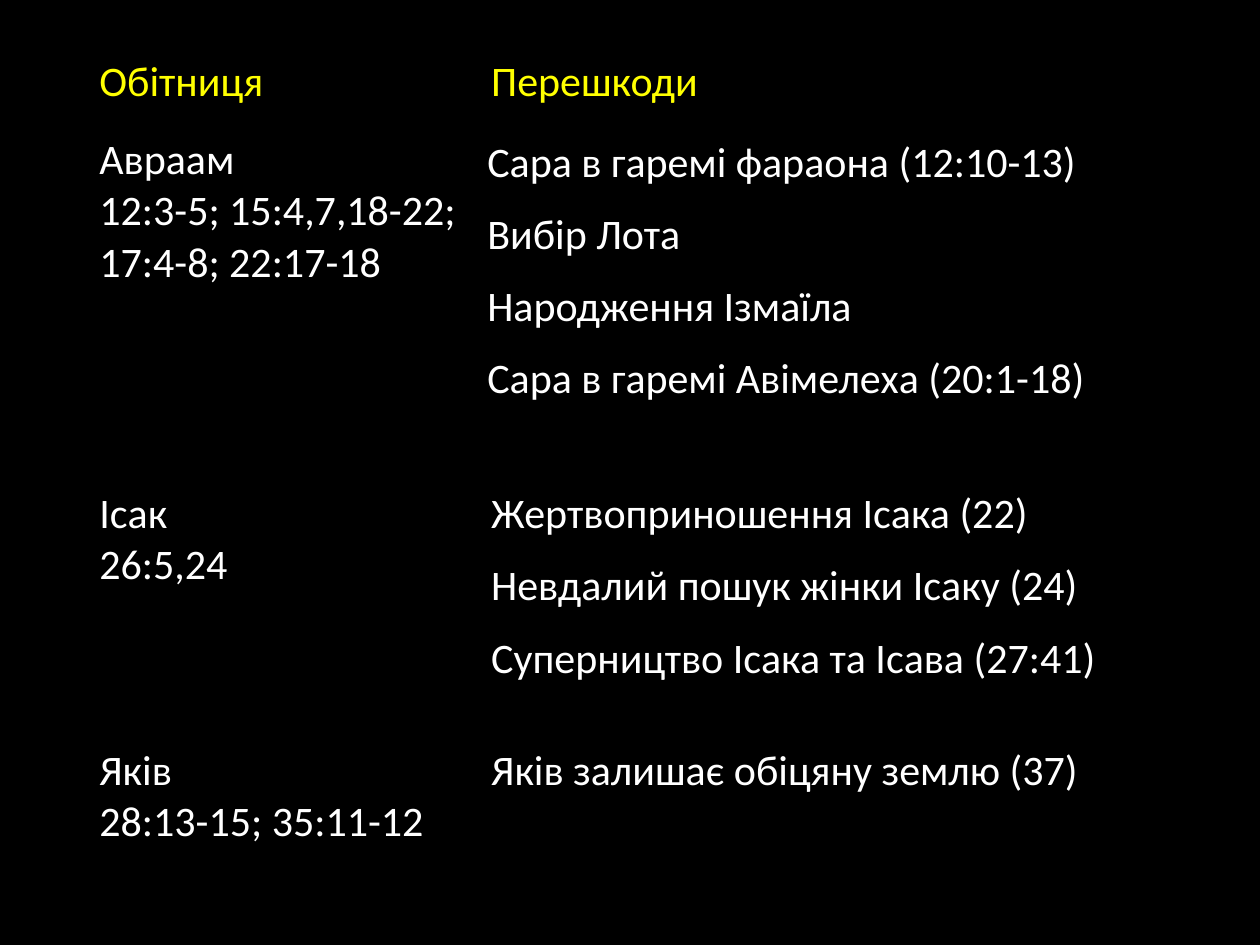
from pptx import Presentation
from pptx.dml.color import RGBColor as RGB
from pptx.oxml import parse_xml
from pptx.oxml.ns import nsdecls
from pptx.util import Pt

COLORS = {"background": "000000", "border": "000000",
          "heading": "FFFF00", "body": "FFFFFF"}

COLUMN_WIDTHS = [223.9, 397.1]
ROW_HEIGHTS = [44.6, 202.3, 146.9, 67.7]

HEADINGS = ["Обітниця", "Перешкоди"]
# Each row: promise paragraphs, obstacle paragraphs
PATRIARCHS = [
    (["Авраам", "12:3-5; 15:4,7,18-22; 17:4-8; 22:17-18"],
     ["Сара в гаремі фараона (12:10-13)", "Вибір Лота",
      "Народження Ізмаїла", "Сара в гаремі Авімелеха (20:1-18)"]),
    (["Ісак", "26:5,24"],
     ["Жертвоприношення Ісака (22)", "Невдалий пошук жінки Ісаку (24)",
      "Суперництво Ісака та Ісава (27:41)"]),
    (["Яків", "28:13-15; 35:11-12"],
     ["Яків залишає обіцяну землю (37)"]),
]


class Deck:
    font = "Calibri"
    size = Pt(24)
    border_width = Pt(1)

    def __init__(self, width, height):
        self.prs = Presentation()
        self.prs.slide_width, self.prs.slide_height = Pt(width), Pt(height)
        self.slide = None

    def add_slide(self):
        self.slide = self.prs.slides.add_slide(self.prs.slide_layouts[6])
        fill = self.slide.background.fill
        fill.solid()
        fill.fore_color.rgb = RGB.from_string(COLORS["background"])

    def table(self, left, top, widths, heights):
        grid = self.slide.shapes.add_table(
            len(heights), len(widths), Pt(left), Pt(top),
            Pt(sum(widths)), Pt(sum(heights))).table
        grid.first_row = grid.horz_banding = False
        for column, width in zip(grid.columns, widths):
            column.width = Pt(width)
        for row, height in zip(grid.rows, heights):
            row.height = Pt(height)
        return grid

    def borders(self, cell):
        properties = cell._tc.get_or_add_tcPr()
        for side in "LRTB":
            properties.append(parse_xml(
                f'<a:ln{side} {nsdecls("a")} w="{self.border_width}"><a:solidFill>'
                f'<a:srgbClr val="{COLORS["border"]}"/></a:solidFill></a:ln{side}>'))

    def cell(self, cell, lines, color, gap=0, inset=None):
        self.borders(cell)
        cell.fill.background()
        if inset is not None:
            cell.margin_left = cell.margin_right = Pt(inset)
            cell.margin_top = cell.margin_bottom = Pt(inset)
        frame = cell.text_frame
        for i, line in enumerate(lines):
            paragraph = frame.add_paragraph() if i else frame.paragraphs[0]
            if i and gap:
                paragraph.space_before = Pt(gap)
            run = paragraph.add_run()
            run.text = line
            run.font.name, run.font.size = self.font, self.size
            run.font.color.rgb = RGB.from_string(COLORS[color])


def main():
    deck = Deck(720, 540)
    deck.add_slide()
    promises = deck.table(49.6, 28.8, COLUMN_WIDTHS, ROW_HEIGHTS)

    # Heading row
    for col, heading in enumerate(HEADINGS):
        deck.cell(promises.cell(0, col), [heading], "heading")

    # One row for each patriarch; the first obstacles cell has even insets
    for row, (promise, obstacles) in enumerate(PATRIARCHS, start=1):
        deck.cell(promises.cell(row, 0), promise, "body")
        deck.cell(promises.cell(row, 1), obstacles, "body", gap=12,
                  inset=5 if row == 1 else None)

    deck.prs.save("out.pptx")


if __name__ == "__main__":
    main()
